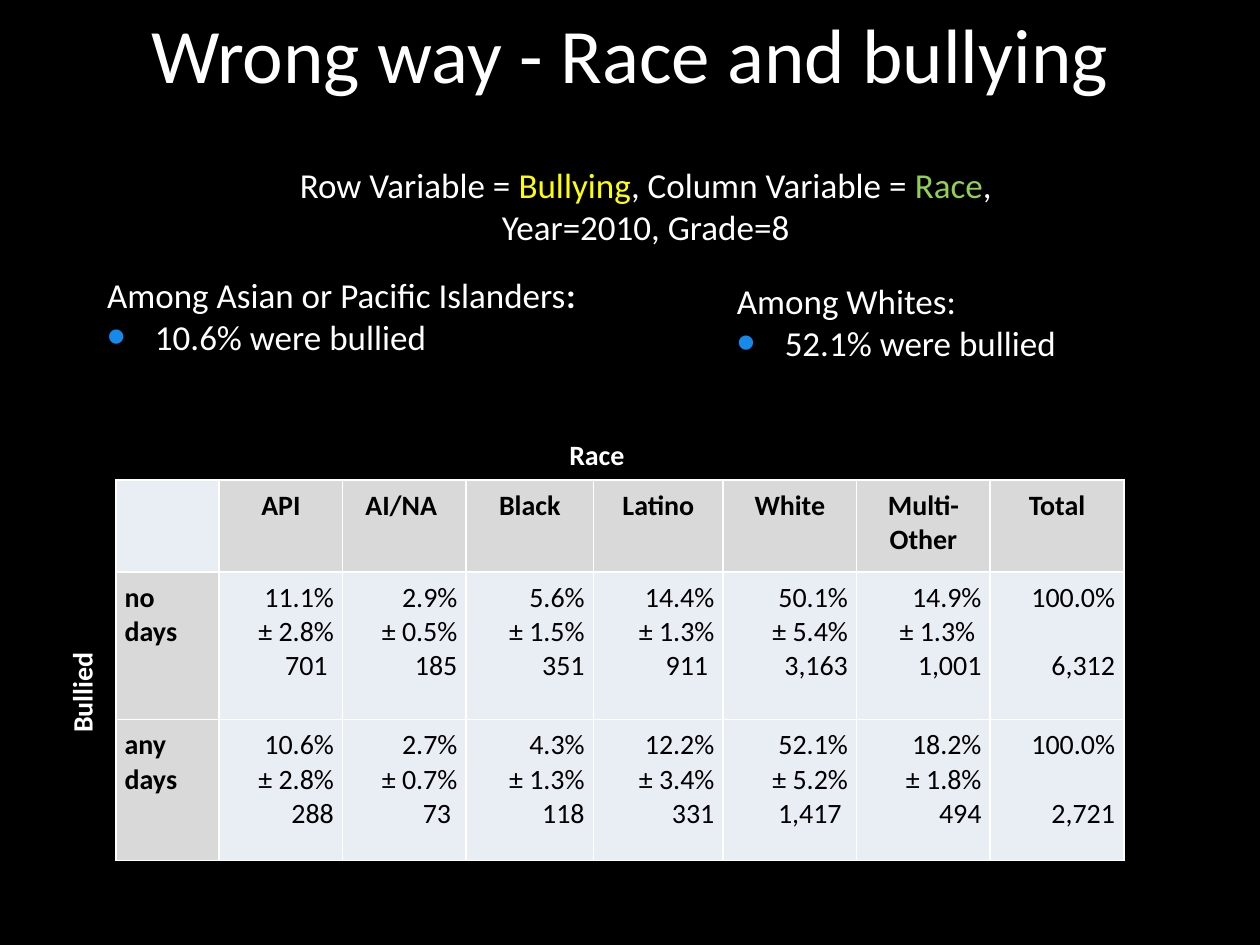
from lxml.etree import SubElement as Sub
from pptx import Presentation
from pptx.dml.color import RGBColor as RGB
from pptx.enum.text import MSO_ANCHOR as Anchor, MSO_AUTO_SIZE as Auto, PP_ALIGN as Align
from pptx.oxml.ns import qn
from pptx.util import Inches, Pt

HUES = {"black": "000000", "white": "FFFFFF", "yellow": "FFFF00", "green": "92D050",
        "blue": "158AEB", "gray": "D9D9D9", "pale": "E9EDF4"}
COLS = [0.82, 0.98, 0.98, 1.01, 1.03, 1.06, 1.06, 1.06]
ROWS = [0.73, 1.17, 1.12]
CELLS = [
    ["", "API", "AI/NA ", "Black", "Latino", "White", "Multi-Other", "Total"],
    ["no days", "11.1%\n± 2.8%\n701 ", "2.9%\n± 0.5%\n185", "5.6%\n± 1.5%\n351",
     "14.4%\n± 1.3%\n911 ", "50.1%\n± 5.4%\n3,163", "14.9%\n± 1.3% \n1,001",
     "100.0%\n \n6,312"],
    ["any days", "10.6%\n± 2.8%\n288", "2.7%\n± 0.7%\n73 ", "4.3%\n± 1.3%\n118",
     "12.2%\n± 3.4%\n331", "52.1%\n± 5.2%\n1,417 ", "18.2%\n± 1.8%\n494",
     "100.0%\n \n2,721"],
]


def hue(name):
    return RGB.from_string(HUES[name])


def place(shape, left, top, width, height):
    shape.left, shape.top = Inches(left), Inches(top)
    shape.width, shape.height = Inches(width), Inches(height)


def style(para, size, color="white", bold=False, align=Align.LEFT):
    para.alignment = align
    font = para.font
    font.name, font.size, font.bold = "Calibri", Pt(size), bold
    font.color.rgb = hue(color)


def plain(para):
    props = para._p.get_or_add_pPr()
    props.set("marL", "0")
    props.set("indent", "0")
    Sub(props, qn("a:buNone"))


def bullet(para):
    props = para._p.get_or_add_pPr()
    props.set("marL", str(Inches(0.38)))
    props.set("indent", str(-Inches(0.38)))
    Sub(Sub(props, qn("a:buClr")), qn("a:srgbClr"), val=HUES["blue"])
    Sub(props, qn("a:buSzPct"), val="150000")
    Sub(props, qn("a:buFont"), typeface="Arial")
    Sub(props, qn("a:buChar"), char="•")


def add_text(slide, box, lines, size, bold=False):
    shape = slide.shapes.add_textbox(*map(Inches, box))
    frame = shape.text_frame
    frame.word_wrap = True
    frame.text = "\n".join(lines)
    for para in frame.paragraphs:
        style(para, size, bold=bold)
    return shape


def set_title(slide):
    title = slide.shapes.title
    place(title, 0.5, 0, 9, 1.25)
    frame = title.text_frame
    frame.text = "Wrong way - Race and bullying"
    frame.vertical_anchor = Anchor.TOP
    frame.auto_size = Auto.NONE
    style(frame.paragraphs[0], 44, align=Align.CENTER)


def set_body(slide):
    body = slide.placeholders[1]
    place(body, 0.75, 1.25, 8.75, 1.99)
    frame = body.text_frame
    frame.auto_size = Auto.NONE
    lines = [
        [("Row Variable = ", "white"), ("Bullying", "yellow"),
         (", Column Variable = ", "white"), ("Race", "green"), (",", "white")],
        [("Year=2010, Grade=8", "white")],
        [("Among Asian or Pacific Islanders", "white"), (":", "white")],
        [("10.6% were bullied", "white")],
    ]
    for i, parts in enumerate(lines):
        para = frame.paragraphs[0] if i == 0 else frame.add_paragraph()
        bullet(para) if i == 3 else plain(para)
        style(para, 20, align=Align.CENTER if i < 2 else Align.LEFT)
        para.space_before = Pt(14.6 if i == 2 else 0)
        for text, color in parts:
            run = para.add_run()
            run.text = text
            if color != "white":
                run.font.color.rgb = hue(color)
    frame.paragraphs[2].runs[1].font.bold = True


def add_edges(cell):
    props = cell._tc.get_or_add_tcPr()
    for side in ("lnL", "lnR", "lnT", "lnB"):
        line = Sub(props, qn(f"a:{side}"), w=str(Pt(1)))
        Sub(Sub(line, qn("a:solidFill")), qn("a:srgbClr"), val=HUES["white"])


def fill_cell(cell, text, row, col):
    head = row == 0 or col == 0
    cell.margin_left = cell.margin_right = Inches(0.07)
    cell.margin_top = cell.margin_bottom = Inches(0.07)
    add_edges(cell)
    cell.fill.solid()
    cell.fill.fore_color.rgb = hue("gray" if head and text else "pale")
    para = cell.text_frame.paragraphs[0]
    for i, part in enumerate(text.split("\n")):
        if i:
            para.add_line_break()
        para.add_run().text = part
    align = Align.LEFT if col == 0 else Align.CENTER if row == 0 else Align.RIGHT
    style(para, 16, "black", head, align)


def add_grid(slide):
    box = map(Inches, (0.92, 3.81, sum(COLS), sum(ROWS)))
    table = slide.shapes.add_table(len(ROWS), len(COLS), *box).table
    for col, width in zip(table.columns, COLS):
        col.width = Inches(width)
    for row, height in zip(table.rows, ROWS):
        row.height = Inches(height)
    for r, texts in enumerate(CELLS):
        for c, text in enumerate(texts):
            fill_cell(table.cell(r, c), text, r, c)


def main():
    deck = Presentation()
    deck.slide_width, deck.slide_height = Inches(10), Inches(7.5)
    slide = deck.slides.add_slide(deck.slide_layouts[1])
    slide.background.fill.solid()
    slide.background.fill.fore_color.rgb = hue("black")
    set_title(slide)
    set_body(slide)
    add_grid(slide)
    whites = add_text(slide, (5.75, 2.17, 3.75, 0.77),
                      ["Among Whites:", "52.1% were bullied"], 20)
    last = whites.text_frame.paragraphs[1]
    last._p.pPr.remove(last._p.pPr.find(qn("a:defRPr")))
    bullet(last)
    style(last, 20)
    side = add_text(slide, (-0.3, 4.51, 2.17, 0.64), ["Bullied"], 16, True)
    side.rotation = 270
    add_text(slide, (4.42, 3.42, 2.17, 0.64), ["Race"], 16, True)
    deck.save("out.pptx")


if __name__ == "__main__":
    main()
